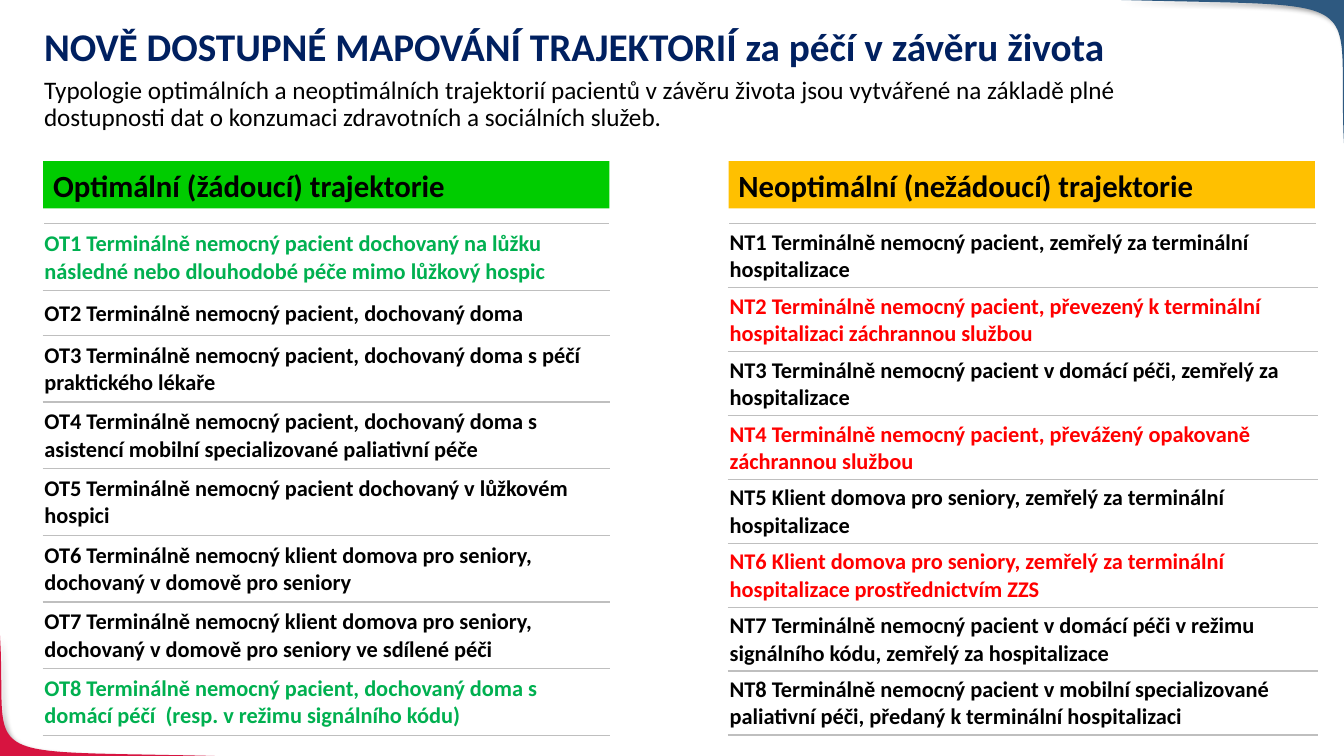
from dataclasses import dataclass

from lxml.etree import SubElement
from pptx import Presentation
from pptx.dml.color import RGBColor
from pptx.enum.shapes import MSO_SHAPE
from pptx.enum.text import MSO_ANCHOR, PP_ALIGN
from pptx.oxml.ns import qn
from pptx.util import Cm, Pt


@dataclass(frozen=True)
class Theme:
    font: str = "Calibri"
    title_size: int = 28
    header_size: int = 22
    body_size: int = 18
    cell_size: int = 16
    navy: str = "002060"
    black: str = "000000"
    white: str = "FFFFFF"
    rule: str = "BFBFBF"
    green: str = "00B050"
    red: str = "FF0000"
    optimal: str = "00CC00"
    nonoptimal: str = "FFC000"
    corner_red: str = "D71440"
    corner_blue: str = "2E5980"


def solid(parent, color):
    fill = SubElement(parent, qn("a:solidFill"))
    SubElement(fill, qn("a:srgbClr"), val=color)


def bezier(p0, p1, p2, p3, steps=48):
    for i in range(steps + 1):
        t = i / steps
        u = 1 - t
        yield tuple(u**3 * a + 3 * u * u * t * b + 3 * u * t * t * c + t**3 * d
                    for a, b, c, d in zip(p0, p1, p2, p3))


class Deck:
    def __init__(self, prs, theme):
        self.theme = theme
        self.s = prs.slides.add_slide(prs.slide_layouts[6])

    def fill_text(self, tf, text, size, color, bold=False, spacing=None):
        p = tf.paragraphs[0]
        p.alignment = PP_ALIGN.LEFT
        p.line_spacing = spacing
        r = p.add_run()
        r.text = text
        style = {"name": self.theme.font, "size": Pt(size), "bold": bold}
        for key, value in style.items():
            setattr(r.font, key, value)
        r.font.color.rgb = RGBColor.from_string(color)

    def text(self, box, text, size, color, bold=False):
        tf = self.s.shapes.add_textbox(*map(Cm, box)).text_frame
        tf.word_wrap = True
        self.fill_text(tf, text, size, color, bold, 0.9)

    def header(self, box, text, color):
        sp = self.s.shapes.add_shape(MSO_SHAPE.RECTANGLE, *map(Cm, box))
        sp.shadow.inherit = False
        sp.fill.solid()
        sp.fill.fore_color.rgb = RGBColor.from_string(color)
        sp.line.fill.background()
        tf = sp.text_frame
        tf.word_wrap = True
        tf.vertical_anchor = MSO_ANCHOR.MIDDLE
        self.fill_text(tf, text, self.theme.header_size, self.theme.black, True)

    def corner(self, curve, tip, color):
        points = [(Cm(x), Cm(y)) for x, y in [*bezier(*curve), tip]]
        fb = self.s.shapes.build_freeform(*points[0])
        fb.add_line_segments(points[1:], close=True)
        sp = fb.convert_to_shape()
        sp.fill.solid()
        sp.fill.fore_color.rgb = RGBColor.from_string(color)
        sp.line.fill.background()
        # Soft shadow along the curved edge
        sp.shadow.inherit = False
        effects = sp._element.spPr.find(qn("a:effectLst"))
        shadow = SubElement(effects, qn("a:outerShdw"), blurRad=str(Pt(4)),
                            dist=str(Pt(3)), dir="2700000", rotWithShape="0")
        clr = SubElement(shadow, qn("a:srgbClr"), val=self.theme.black)
        SubElement(clr, qn("a:alpha"), val="40000")

    def borders(self, cell):
        tc_pr = cell._tc.get_or_add_tcPr()
        sides = {"L": self.theme.white, "R": self.theme.white,
                 "T": self.theme.rule, "B": self.theme.rule}
        for side, color in sides.items():
            solid(SubElement(tc_pr, qn(f"a:ln{side}"), w=str(Pt(1))), color)

    def table(self, left, top, width, heights, texts, accent, accented):
        frame = self.s.shapes.add_table(len(texts), 1, Cm(left), Cm(top),
                                        Cm(width), Cm(sum(heights)))
        table = frame.table
        table.first_row = table.horz_banding = False
        layout = {"margin_left": Cm(0.03), "margin_right": Cm(0.03),
                  "margin_top": Cm(0.03), "margin_bottom": 0,
                  "vertical_anchor": MSO_ANCHOR.MIDDLE}
        for i, (height, text) in enumerate(zip(heights, texts), 1):
            table.rows[i - 1].height = Cm(height)
            cell = table.cell(i - 1, 0)
            for key, value in layout.items():
                setattr(cell, key, value)
            self.borders(cell)
            cell.fill.background()
            color = accent if i in accented else self.theme.black
            self.fill_text(cell.text_frame, text, self.theme.cell_size, color, True)


OPTIMAL = [
    "OT1 Terminálně nemocný pacient dochovaný na lůžku následné nebo dlouhodobé péče mimo lůžkový hospic",
    "OT2 Terminálně nemocný pacient, dochovaný doma",
    "OT3 Terminálně nemocný pacient, dochovaný doma s péčí praktického lékaře",
    "OT4 Terminálně nemocný pacient, dochovaný doma s asistencí mobilní specializované paliativní péče",
    "OT5 Terminálně nemocný pacient dochovaný v lůžkovém hospici",
    "OT6 Terminálně nemocný klient domova pro seniory, dochovaný v domově pro seniory",
    "OT7 Terminálně nemocný klient domova pro seniory, dochovaný v domově pro seniory ve sdílené péči",
    "OT8 Terminálně nemocný pacient, dochovaný doma s domácí péčí  (resp. v režimu signálního kódu)",
]
NONOPTIMAL = [
    "NT1 Terminálně nemocný pacient, zemřelý za terminální hospitalizace",
    "NT2 Terminálně nemocný pacient, převezený k terminální hospitalizaci záchrannou službou",
    "NT3 Terminálně nemocný pacient v domácí péči, zemřelý za hospitalizace",
    "NT4 Terminálně nemocný pacient, převážený opakovaně záchrannou službou",
    "NT5 Klient domova pro seniory, zemřelý za terminální hospitalizace",
    "NT6 Klient domova pro seniory, zemřelý za terminální hospitalizace prostřednictvím ZZS",
    "NT7 Terminálně nemocný pacient v domácí péči v režimu signálního kódu, zemřelý za hospitalizace",
    "NT8 Terminálně nemocný pacient v mobilní specializované paliativní péči, předaný k terminální hospitalizaci",
]


def main():
    prs = Presentation()
    prs.slide_width, prs.slide_height = Cm(33.87), Cm(19.05)
    theme = Theme()
    deck = Deck(prs, theme)

    # Corner decoration
    deck.corner([(5.41, 19.05), (-0.86, 18.9), (0.2, 19.28), (0, 16)],
                (0, 19.05), theme.corner_red)
    deck.corner([(28.22, 0), (34.8, 0.18), (33.68, -0.25), (33.87, 3.61)],
                (33.87, 0), theme.corner_blue)

    # Trajectory tables
    left, right, top = 1.09, 18.36, 5.64
    deck.table(left, top, 14.27, [1.68, 1.13] + [1.68] * 6, OPTIMAL,
               theme.green, {1, 8})
    deck.table(right, top, 14.83, [1.61] * 8, NONOPTIMAL,
               theme.red, {2, 4, 6})

    # Column headers
    deck.header((left, 4.06, 14.27, 1.19),
                "Optimální (žádoucí) trajektorie", theme.optimal)
    deck.header((right, 4.06, 14.78, 1.19),
                "Neoptimální (nežádoucí) trajektorie", theme.nonoptimal)

    # Title and introduction
    deck.text((0.86, 0.58, 31.83, 1.75),
              "NOVĚ DOSTUPNÉ MAPOVÁNÍ TRAJEKTORIÍ za péčí v závěru života",
              theme.title_size, theme.navy, True)
    deck.text((0.86, 1.83, 28.32, 1.75),
              "Typologie optimálních a neoptimálních trajektorií pacientů v závěru života "
              "jsou vytvářené na základě plné dostupnosti dat o konzumaci zdravotních a "
              "sociálních služeb.",
              theme.body_size, theme.black)

    prs.save("out.pptx")


if __name__ == "__main__":
    main()
